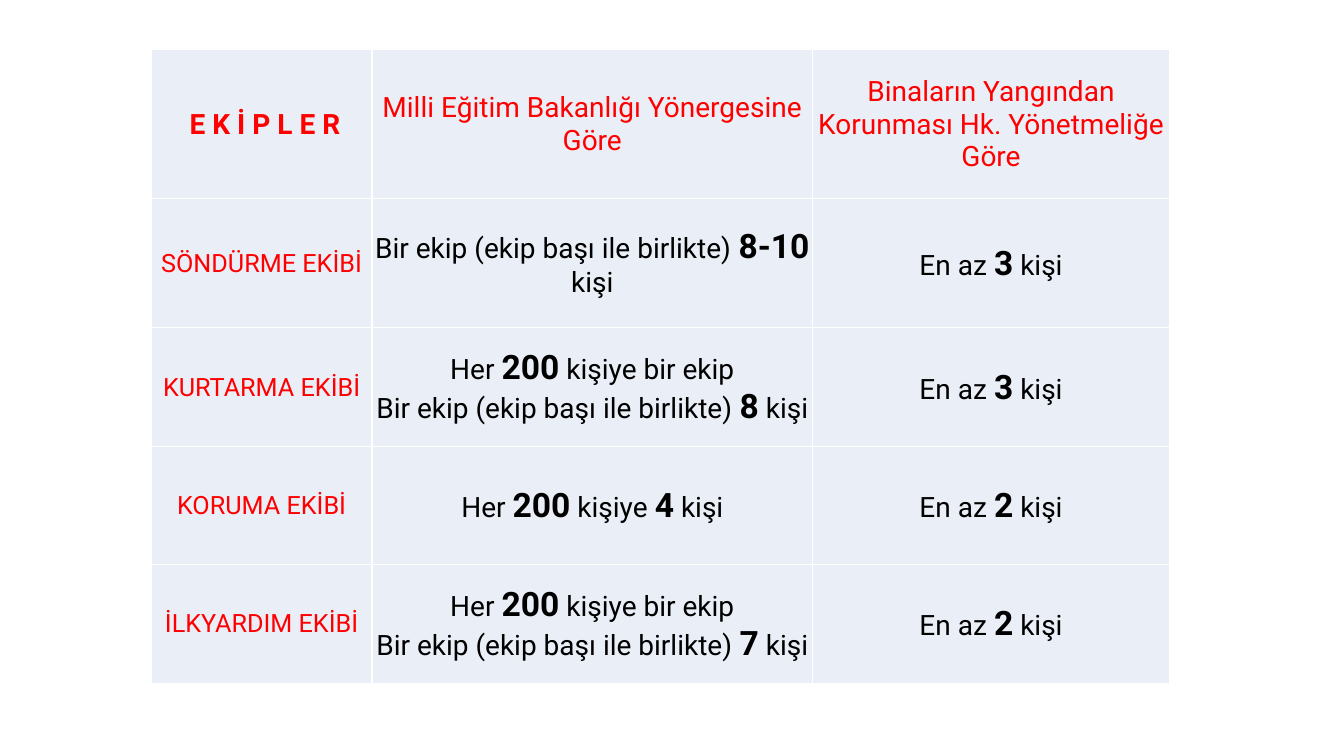
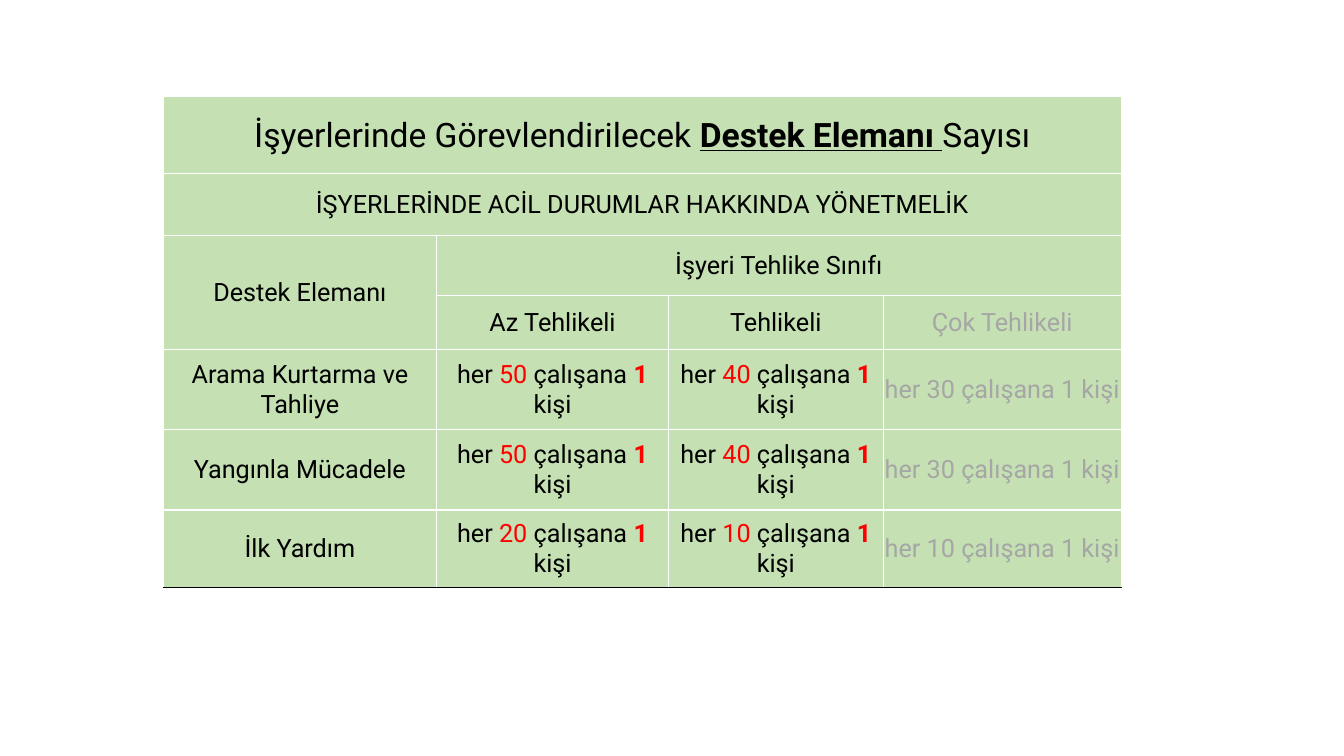
import dataclasses

import lxml.etree
import pptx
import pptx.dml.color
import pptx.enum.text
import pptx.oxml.ns
import pptx.util

Inches = pptx.util.Inches


@dataclasses.dataclass(frozen=True)
class Theme:
    font: str = "Roboto"
    blue: str = "EAEFF7"
    green: str = "A9D18E"
    white: str = "FFFFFF"
    black: str = "000000"
    red: str = "FF0000"
    gray: str = "A6A6A6"
    large: int = 24
    medium: int = 20
    small: int = 18
    border: float = 1
    margin: float = 0.01


theme = Theme()

# Run styles: size, colour, bold, underline
STYLES = {
    "heading": (theme.medium, theme.red, False, False),
    "heading bold": (theme.medium, theme.red, True, False),
    "team": (theme.small, theme.red, False, False),
    "body": (theme.medium, theme.black, False, False),
    "number": (theme.large, theme.black, True, False),
    "title": (theme.large, theme.black, False, False),
    "title key": (theme.large, theme.black, True, True),
    "label": (theme.small, theme.black, False, False),
    "muted": (theme.small, theme.gray, False, False),
    "red": (theme.small, theme.red, False, False),
    "red bold": (theme.small, theme.red, True, False),
}


def add_grid(slide, left, top, widths, heights, fill, opacity=100, last_border=theme.white):
    """Add a table whose cells all have the same fill, margins and borders."""
    table = slide.shapes.add_table(
        len(heights), len(widths), Inches(left), Inches(top),
        Inches(sum(widths)), Inches(sum(heights))).table
    table.first_row = table.horz_banding = False
    for column, width in zip(table.columns, widths):
        column.width = Inches(width)
    for row_index, (row, height) in enumerate(zip(table.rows, heights)):
        row.height = Inches(height)
        bottom = last_border if row_index == len(heights) - 1 else theme.white
        for cell in row.cells:
            cell.vertical_anchor = pptx.enum.text.MSO_ANCHOR.MIDDLE
            cell.margin_left = cell.margin_right = cell.margin_top = Inches(theme.margin)
            cell.margin_bottom = 0
            cell.fill.solid()
            cell.fill.fore_color.rgb = pptx.dml.color.RGBColor.from_string(fill)
            properties = cell._tc.get_or_add_tcPr()
            qn = pptx.oxml.ns.qn
            if opacity < 100:
                color = properties.find(".//" + qn("a:srgbClr"))
                lxml.etree.SubElement(color, qn("a:alpha"), val=str(opacity * 1000))
            # Border lines come before the fill
            for position, side in enumerate("LRTB"):
                line = lxml.etree.Element(
                    qn("a:ln" + side), w=str(pptx.util.Pt(theme.border)))
                solid = lxml.etree.SubElement(line, qn("a:solidFill"))
                lxml.etree.SubElement(
                    solid, qn("a:srgbClr"), val=bottom if side == "B" else theme.white)
                properties.insert(position, line)
    return table


def write_cell(cell, *paragraphs):
    """Fill a cell with centred paragraphs, each a list of (text, style) runs."""
    for index, runs in enumerate(paragraphs):
        frame = cell.text_frame
        paragraph = frame.add_paragraph() if index else frame.paragraphs[0]
        paragraph.alignment = pptx.enum.text.PP_ALIGN.CENTER
        for text, style in runs:
            size, color, bold, underline = STYLES[style]
            run = paragraph.add_run()
            run.text = text
            run.font.name = theme.font
            run.font.size = pptx.util.Pt(size)
            run.font.bold = bold
            run.font.underline = underline
            run.font.color.rgb = pptx.dml.color.RGBColor.from_string(color)


presentation = pptx.Presentation()
presentation.slide_width = Inches(13.33)
presentation.slide_height = Inches(7.5)
blank_layout = presentation.slide_layouts[6]

# Slide 1: emergency teams under the two regulations
slide = presentation.slides.add_slide(blank_layout)
table = add_grid(slide, 1.5, 0.49, [2.19, 4.37, 3.54],
                 [1.48, 1.28, 1.18, 1.17, 1.18], theme.blue)
headings = [
    (" E K İ P L E R", "heading bold"),
    ("Milli Eğitim Bakanlığı Yönergesine Göre", "heading"),
    ("Binaların Yangından Korunması Hk. Yönetmeliğe Göre", "heading"),
]
for column, heading in enumerate(headings):
    write_cell(table.cell(0, column), [heading])

team_start = ("Bir ekip (ekip başı ile birlikte) ", "body")
people = (" kişi", "body")
per_200 = [("Her ", "body"), ("200", "number")]
one_team = per_200 + [(" kişiye bir ekip", "body")]
teams = [
    ("SÖNDÜRME EKİBİ", [[team_start, ("8-10", "number"), people]], "3"),
    ("KURTARMA EKİBİ", [one_team, [team_start, ("8", "number"), people]], "3"),
    ("KORUMA EKİBİ", [per_200 + [(" kişiye ", "body"), ("4", "number"), people]], "2"),
    ("İLKYARDIM EKİBİ", [one_team, [team_start, ("7", "number"), people]], "2"),
]
for row, (team, directive, minimum) in enumerate(teams, start=1):
    write_cell(table.cell(row, 0), [(team, "team")])
    write_cell(table.cell(row, 1), *directive)
    write_cell(table.cell(row, 2), [("En az ", "body"), (minimum, "number"), people])

# Slide 2: support staff by hazard class
slide = presentation.slides.add_slide(blank_layout)
table = add_grid(slide, 1.62, 0.96, [2.71, 2.3, 2.13, 2.36],
                 [0.76, 0.62, 0.59, 0.54, 0.79, 0.8, 0.77],
                 theme.green, opacity=67, last_border=theme.black)
for first, last in [((0, 0), (0, 3)), ((1, 0), (1, 3)), ((2, 0), (3, 0)), ((2, 1), (2, 3))]:
    table.cell(*first).merge(table.cell(*last))

write_cell(table.cell(0, 0), [("İşyerlerinde Görevlendirilecek ", "title"),
                              ("Destek Elemanı ", "title key"), ("Sayısı", "title")])
labels = [
    (1, 0, "İŞYERLERİNDE ACİL DURUMLAR HAKKINDA YÖNETMELİK", "label"),
    (2, 0, "Destek Elemanı", "label"),
    (2, 1, "İşyeri Tehlike Sınıfı", "label"),
    (3, 1, "Az Tehlikeli", "label"),
    (3, 2, "Tehlikeli", "label"),
    (3, 3, "Çok Tehlikeli", "muted"),
]
for row, column, text, style in labels:
    write_cell(table.cell(row, column), [(text, style)])

# Employees per support person: low, medium and high hazard
duties = [
    ("Arama Kurtarma ve Tahliye", 50, 40, 30),
    ("Yangınla Mücadele", 50, 40, 30),
    ("İlk Yardım", 20, 10, 10),
]
for row, (duty, low, medium, high) in enumerate(duties, start=4):
    write_cell(table.cell(row, 0), [(duty, "label")])
    for column, employees in enumerate((low, medium), start=1):
        write_cell(table.cell(row, column), [
            ("her ", "label"), (f"{employees} ", "red"), ("çalışana ", "label"),
            ("1 ", "red bold"), ("kişi", "label")])
    write_cell(table.cell(row, 3), [(f"her {high} çalışana 1 kişi", "muted")])

presentation.save("out.pptx")
